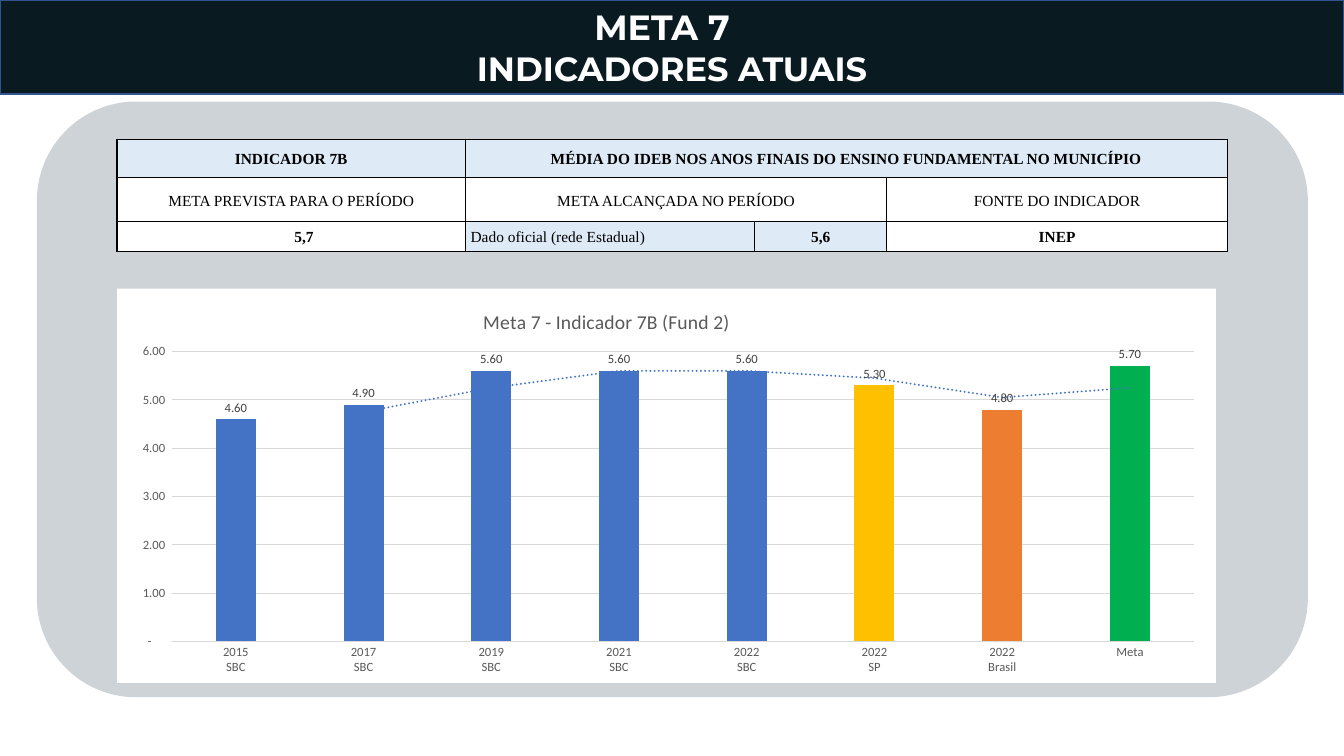
from lxml import etree
from pptx import Presentation
from pptx.chart.data import CategoryChartData
from pptx.dml.color import RGBColor
from pptx.enum.chart import XL_CHART_TYPE as ChartType
from pptx.enum.chart import XL_LABEL_POSITION as LabelPosition
from pptx.enum.chart import XL_TICK_MARK as TickMark
from pptx.enum.shapes import MSO_SHAPE as Shape
from pptx.enum.text import MSO_ANCHOR as Anchor
from pptx.enum.text import PP_ALIGN as Align
from pptx.oxml import parse_xml
from pptx.oxml.ns import nsdecls, qn
from pptx.util import Cm, Pt

WHITE = RGBColor(0xFF, 0xFF, 0xFF)
BLACK = RGBColor(0x00, 0x00, 0x00)
NAVY = RGBColor(0x0A, 0x1A, 0x21)
NAVY_EDGE = RGBColor(0x32, 0x54, 0x91)
PANEL = RGBColor(0xCE, 0xD3, 0xD8)
PALE_BLUE = RGBColor(0xDE, 0xEB, 0xF7)
GRID = RGBColor(0xD9, 0xD9, 0xD9)
AXIS_TEXT = RGBColor(0x59, 0x59, 0x59)
LABEL_TEXT = RGBColor(0x40, 0x40, 0x40)
BLUE = RGBColor(0x44, 0x72, 0xC4)
YELLOW = RGBColor(0xFF, 0xC0, 0x00)
ORANGE = RGBColor(0xED, 0x7D, 0x31)
GREEN = RGBColor(0x00, 0xB0, 0x50)

NUMBER_FORMAT = r'_(* #,##0.00_);_(* \(#,##0.00\);_(* "-"??_);_(@_)'


class SlideBuilder:
    heading_font = "Montserrat"
    table_font = "Times New Roman"
    chart_font = "Calibri"

    def __init__(self, slide):
        self.slide = slide

    def style_font(self, font, name, size, color, bold=False):
        font.name = name
        font.size = Pt(size)
        font.bold = bold
        font.color.rgb = color

    def box(self, kind, place, fill, line=None):
        shape = self.slide.shapes.add_shape(kind, *map(Cm, place))
        shape.shadow.inherit = False
        shape.fill.solid()
        shape.fill.fore_color.rgb = fill
        if line is None:
            shape.line.fill.background()
        else:
            shape.line.color.rgb = line
            shape.line.width = Pt(1)
        return shape

    def heading(self, place, lines):
        frame = self.box(Shape.RECTANGLE, place, NAVY, NAVY_EDGE).text_frame
        frame.word_wrap = True
        frame.vertical_anchor = Anchor.MIDDLE
        for index, (text, size, right_indent) in enumerate(lines):
            paragraph = frame.add_paragraph() if index else frame.paragraphs[0]
            paragraph.alignment = Align.CENTER
            paragraph._p.get_or_add_pPr().set("marR", str(Cm(right_indent)))
            run = paragraph.add_run()
            run.text = text
            self.style_font(run.font, self.heading_font, size, WHITE, True)

    def cell_borders(self, cell):
        properties = cell._tc.get_or_add_tcPr()
        for index, side in enumerate(("lnL", "lnR", "lnT", "lnB")):
            properties.insert(index, parse_xml(
                f'<a:{side} {nsdecls("a")} w="{Pt(1)}"><a:solidFill>'
                f'<a:srgbClr val="{BLACK}"/></a:solidFill></a:{side}>'))

    def table(self, place, widths, heights, cells):
        """Each cell: row, column, span, text, fill, bold, alignment, indent."""
        table = self.slide.shapes.add_table(
            len(heights), len(widths), *map(Cm, place)).table
        for column, width in zip(table.columns, widths):
            column.width = Cm(width)
        for row, height in zip(table.rows, heights):
            row.height = Cm(height)
        for row, column, span, text, fill, bold, alignment, indent in cells:
            cell = table.cell(row, column)
            if span > 1:
                cell.merge(table.cell(row, column + span - 1))
            cell.margin_left = cell.margin_right = Cm(0.13)
            cell.margin_top, cell.margin_bottom = Cm(0.03), 0
            cell.vertical_anchor = Anchor.MIDDLE
            paragraph = cell.text_frame.paragraphs[0]
            paragraph.alignment = alignment
            paragraph.line_spacing = 1.07
            paragraph.space_after = Pt(8)
            paragraph._p.get_or_add_pPr().set("marL", str(Cm(indent)))
            run = paragraph.add_run()
            run.text = text
            self.style_font(run.font, self.table_font, 11, BLACK, bold)
            for offset in range(span):
                covered = table.cell(row, column + offset)
                covered.fill.solid()
                covered.fill.fore_color.rgb = fill
                self.cell_borders(covered)

    def manual_layout(self, **values):
        layout = parse_xml(f'<c:layout {nsdecls("c")}><c:manualLayout/></c:layout>')
        for name, value in values.items():
            etree.SubElement(layout[0], qn(f"c:{name}")).set("val", str(value))
        return layout

    def column_chart(self, place, title, bars):
        data = CategoryChartData(number_format="0.00")
        data.categories = [category for category, _, _ in bars]
        data.add_series("IDEB", [value for _, value, _ in bars])
        chart = self.slide.shapes.add_chart(
            ChartType.COLUMN_CLUSTERED, *map(Cm, place), data).chart
        chart.has_legend = False
        self.style_font(chart.font, self.chart_font, 10, BLACK)

        # Background, title and plot position
        chart._chartSpace.chart.addnext(parse_xml(
            f'<c:spPr {nsdecls("c", "a")}><a:solidFill><a:srgbClr val="{WHITE}"/>'
            '</a:solidFill><a:ln><a:noFill/></a:ln></c:spPr>'))
        run = chart.chart_title.text_frame.paragraphs[0].add_run()
        run.text = title
        self.style_font(run.font, self.chart_font, 14, AXIS_TEXT)
        chart.chart_title.include_in_layout = False
        heading = chart.chart_title._element
        for old in heading.findall(qn("c:layout")):
            heading.remove(old)
        heading.find(qn("c:tx")).addnext(
            self.manual_layout(xMode="edge", yMode="edge", x=0.33, y=0.04))
        plot_area = chart._chartSpace.chart.plotArea
        for old in plot_area.findall(qn("c:layout")):
            plot_area.remove(old)
        plot_area.insert(0, self.manual_layout(
            layoutTarget="inner", xMode="edge", yMode="edge",
            x=0.05, y=0.16, w=0.93, h=0.735))

        # Axes
        for axis in (chart.category_axis, chart.value_axis):
            axis.major_tick_mark = axis.minor_tick_mark = TickMark.NONE
            self.style_font(axis.tick_labels.font, self.chart_font, 9, AXIS_TEXT)
        category_line = chart.category_axis.format.line
        value_axis = chart.value_axis
        for line in (category_line, value_axis.major_gridlines.format.line):
            line.color.rgb = GRID
            line.width = Pt(0.75)
        value_axis.format.line.fill.background()
        value_axis.minimum_scale, value_axis.maximum_scale = 0, 6
        value_axis.major_unit = 1
        value_axis.tick_labels.number_format = NUMBER_FORMAT
        value_axis.tick_labels.number_format_is_linked = False

        # Columns and labels
        plot = chart.plots[0]
        plot.gap_width, plot.overlap = 219, -27
        plot.vary_by_categories = False
        series = plot.series[0]
        series.format.fill.solid()
        series.format.fill.fore_color.rgb = BLUE
        for index, (_, _, color) in enumerate(bars):
            if color != BLUE:
                fill = series.points[index].format.fill
                fill.solid()
                fill.fore_color.rgb = color
        labels = series.data_labels
        labels.show_value = True
        labels.position = LabelPosition.OUTSIDE_END
        labels.number_format = NUMBER_FORMAT
        labels.number_format_is_linked = False
        self.style_font(labels.font, self.chart_font, 9, LABEL_TEXT)

        # Moving average
        series._element.find(qn("c:cat")).addprevious(parse_xml(
            f'<c:trendline {nsdecls("c", "a")}><c:spPr><a:ln w="{Pt(1.5)}" cap="rnd">'
            f'<a:solidFill><a:srgbClr val="{BLUE}"/></a:solidFill>'
            '<a:prstDash val="sysDot"/></a:ln></c:spPr>'
            '<c:trendlineType val="movingAvg"/><c:period val="2"/>'
            '<c:dispRSqr val="0"/><c:dispEq val="0"/></c:trendline>'))


def main():
    presentation = Presentation()
    presentation.slide_width, presentation.slide_height = Cm(33.87), Cm(19.05)
    builder = SlideBuilder(presentation.slides.add_slide(presentation.slide_layouts[6]))

    # Heading and panel
    builder.heading((0, 0, 33.87, 2.37),
                    [("META 7", 25, 0.5), ("INDICADORES ATUAIS", 24, 0)])
    builder.box(Shape.ROUNDED_RECTANGLE, (0.93, 2.56, 32.03, 15.01), PANEL)

    # Indicator table
    center, left = Align.CENTER, Align.LEFT
    builder.table((2.95, 3.51, 27.98, 2.82), (8.78, 7.29, 3.33, 8.58), (0.97, 1.11, 0.74), [
        (0, 0, 1, "INDICADOR 7B", PALE_BLUE, True, center, 0),
        (0, 1, 3, "MÉDIA DO IDEB NOS ANOS FINAIS DO ENSINO FUNDAMENTAL NO MUNICÍPIO",
         PALE_BLUE, True, center, 0),
        (1, 0, 1, "META PREVISTA PARA O PERÍODO", WHITE, False, center, 0),
        (1, 1, 2, "META ALCANÇADA NO PERÍODO", WHITE, False, center, 0),
        (1, 3, 1, "FONTE DO INDICADOR", WHITE, False, center, 0),
        (2, 0, 1, "5,7", WHITE, True, center, 0.64),
        (2, 1, 1, "Dado oficial (rede Estadual)", PALE_BLUE, False, left, 0),
        (2, 2, 1, "5,6", PALE_BLUE, True, center, 0),
        (2, 3, 1, "INEP", WHITE, True, center, 0),
    ])

    # Indicator chart
    builder.column_chart((2.95, 7.27, 27.69, 9.94), "Meta 7 - Indicador 7B (Fund 2)", [
        ("2015\nSBC", 4.6, BLUE), ("2017\nSBC", 4.9, BLUE), ("2019\nSBC", 5.6, BLUE),
        ("2021\nSBC", 5.6, BLUE), ("2022\nSBC", 5.6, BLUE), ("2022\nSP", 5.3, YELLOW),
        ("2022\nBrasil", 4.8, ORANGE), ("Meta", 5.7, GREEN),
    ])
    presentation.save("out.pptx")


if __name__ == "__main__":
    main()
